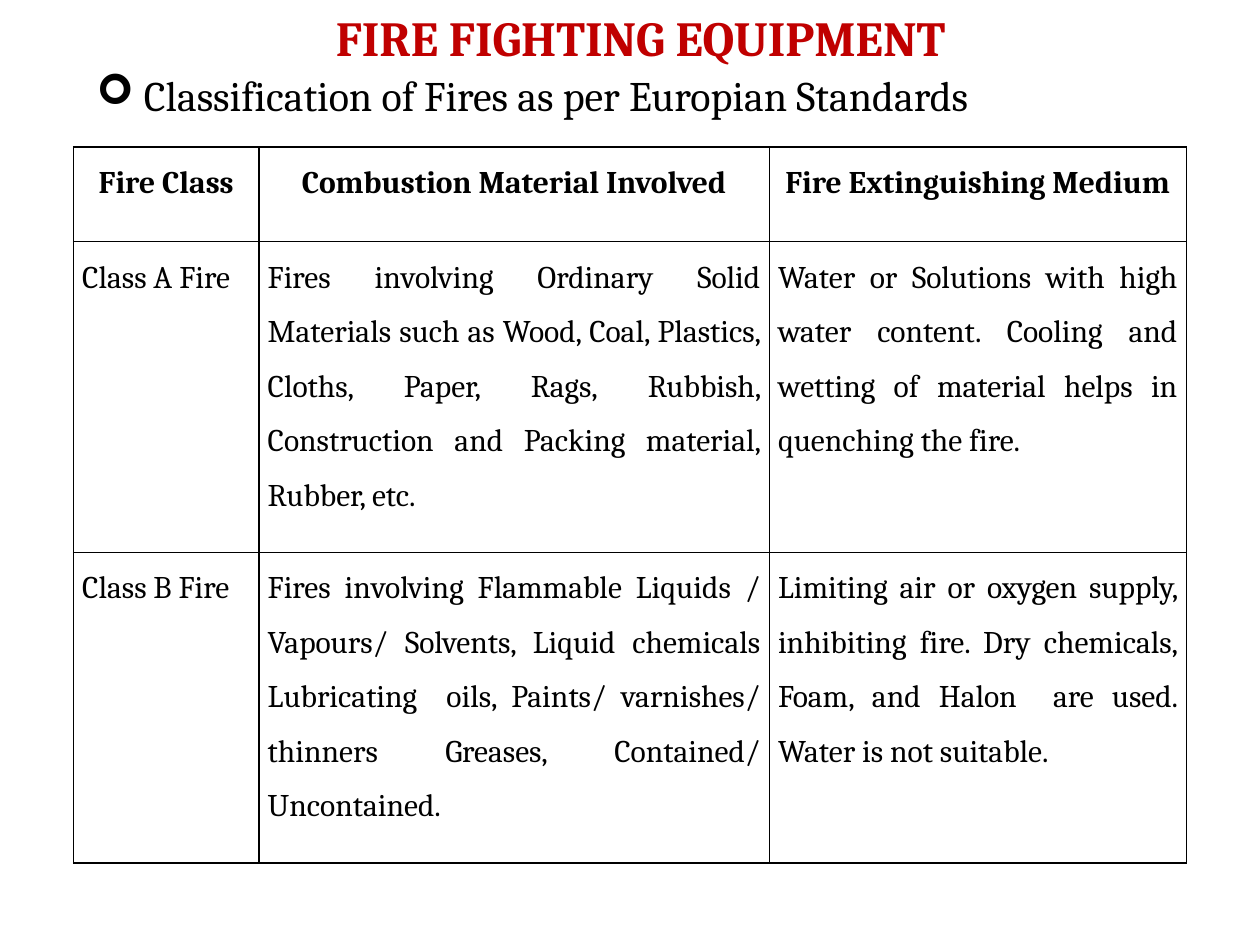
from dataclasses import dataclass

from lxml import etree
from pptx import Presentation
from pptx.dml.color import RGBColor
from pptx.enum import text
from pptx.oxml import ns
from pptx.util import Pt


@dataclass(frozen=True)
class Theme:
    font: str = "Cambria"
    red: str = "C00000"
    black: str = "000000"
    white: str = "FFFFFF"
    title: int = 28
    lead: int = 24
    cell: int = 18


THEME = Theme()
ALIGN = text.PP_ALIGN
COLS = (106, 291.6, 238.3)
ROWS = (54, 177.6, 177.6)
FIRES = (
    ("Fire Class", "Combustion Material Involved", "Fire Extinguishing Medium"),
    ("Class A Fire",
     "Fires involving Ordinary Solid Materials such as Wood, Coal, Plastics, "
     "Cloths, Paper, Rags, Rubbish, Construction and Packing material, "
     "Rubber, etc.",
     "Water or Solutions with high water content. Cooling and wetting of "
     "material helps in quenching the fire."),
    ("Class B Fire",
     "Fires involving Flammable Liquids / Vapours/ Solvents, Liquid chemicals "
     "Lubricating  oils, Paints/ varnishes/ thinners Greases, Contained/ "
     "Uncontained.",
     "Limiting air or oxygen supply, inhibiting fire. Dry chemicals, Foam, "
     "and Halon  are used. Water is not suitable."),
)


def style(para, size, align, color=THEME.black, bold=False):
    para.alignment = align
    font = para.font
    font.name, font.size, font.bold = THEME.font, Pt(size), bold
    font.color.rgb = RGBColor.from_string(color)


def place(shape, left, top, width, height):
    shape.left, shape.top = Pt(left), Pt(top)
    shape.width, shape.height = Pt(width), Pt(height)


def fill_holder(holder, words, box, anchor):
    """Move a placeholder, set its words and return its paragraph."""
    place(holder, *box)
    frame = holder.text_frame
    frame.text = words
    frame.word_wrap = True
    frame.auto_size = text.MSO_AUTO_SIZE.NONE
    frame.vertical_anchor = anchor
    return frame.paragraphs[0]


def add_bullet(para, mark, indent):
    props = para._p.get_or_add_pPr()
    props.set("marL", str(Pt(indent)))
    props.set("indent", str(Pt(-indent)))
    etree.SubElement(props, ns.qn("a:buFont"), typeface="Wingdings")
    etree.SubElement(props, ns.qn("a:buChar"), char=mark)


def add_border(cell):
    props = cell._tc.get_or_add_tcPr()
    for i, side in enumerate("LRTB"):
        line = etree.Element(ns.qn(f"a:ln{side}"), w=str(Pt(1)))
        fill = etree.SubElement(line, ns.qn("a:solidFill"))
        etree.SubElement(fill, ns.qn("a:srgbClr"), val=THEME.black)
        props.insert(i, line)


def fill_cell(cell, words, head):
    cell.text = words
    cell.margin_left = cell.margin_right = Pt(5)
    cell.margin_top = cell.margin_bottom = 0
    cell.fill.solid()
    cell.fill.fore_color.rgb = RGBColor.from_string(THEME.white)
    add_border(cell)
    para = cell.text_frame.paragraphs[0]
    para.line_spacing = 1.5
    style(para, THEME.cell, ALIGN.CENTER if head else ALIGN.JUSTIFY, bold=head)


def add_grid(slide, left, top):
    frame = slide.shapes.add_table(len(ROWS), len(COLS), Pt(left), Pt(top),
                                   Pt(sum(COLS)), Pt(sum(ROWS)))
    table = frame.table
    table.horz_banding = table.first_row = False
    for col, width in zip(table.columns, COLS):
        col.width = Pt(width)
    for r, (row, height) in enumerate(zip(table.rows, ROWS)):
        row.height = Pt(height)
        for cell, words in zip(row.cells, FIRES[r]):
            fill_cell(cell, words, r == 0)


def main():
    deck = Presentation()
    deck.slide_width, deck.slide_height = Pt(720), Pt(540)
    slide = deck.slides.add_slide(deck.slide_layouts[1])
    title = fill_holder(slide.shapes.title, "FIRE FIGHTING EQUIPMENT",
                        (42, 0, 648, 42), text.MSO_ANCHOR.MIDDLE)
    style(title, THEME.title, ALIGN.CENTER, THEME.red, True)
    lead = fill_holder(slide.placeholders[1],
                       "Classification of Fires as per Europian Standards",
                       (48, 36, 583, 48), text.MSO_ANCHOR.TOP)
    add_bullet(lead, "➢", 27)
    style(lead, THEME.lead, ALIGN.JUSTIFY)
    add_grid(slide, 42, 84)
    deck.save("out.pptx")


if __name__ == "__main__":
    main()
